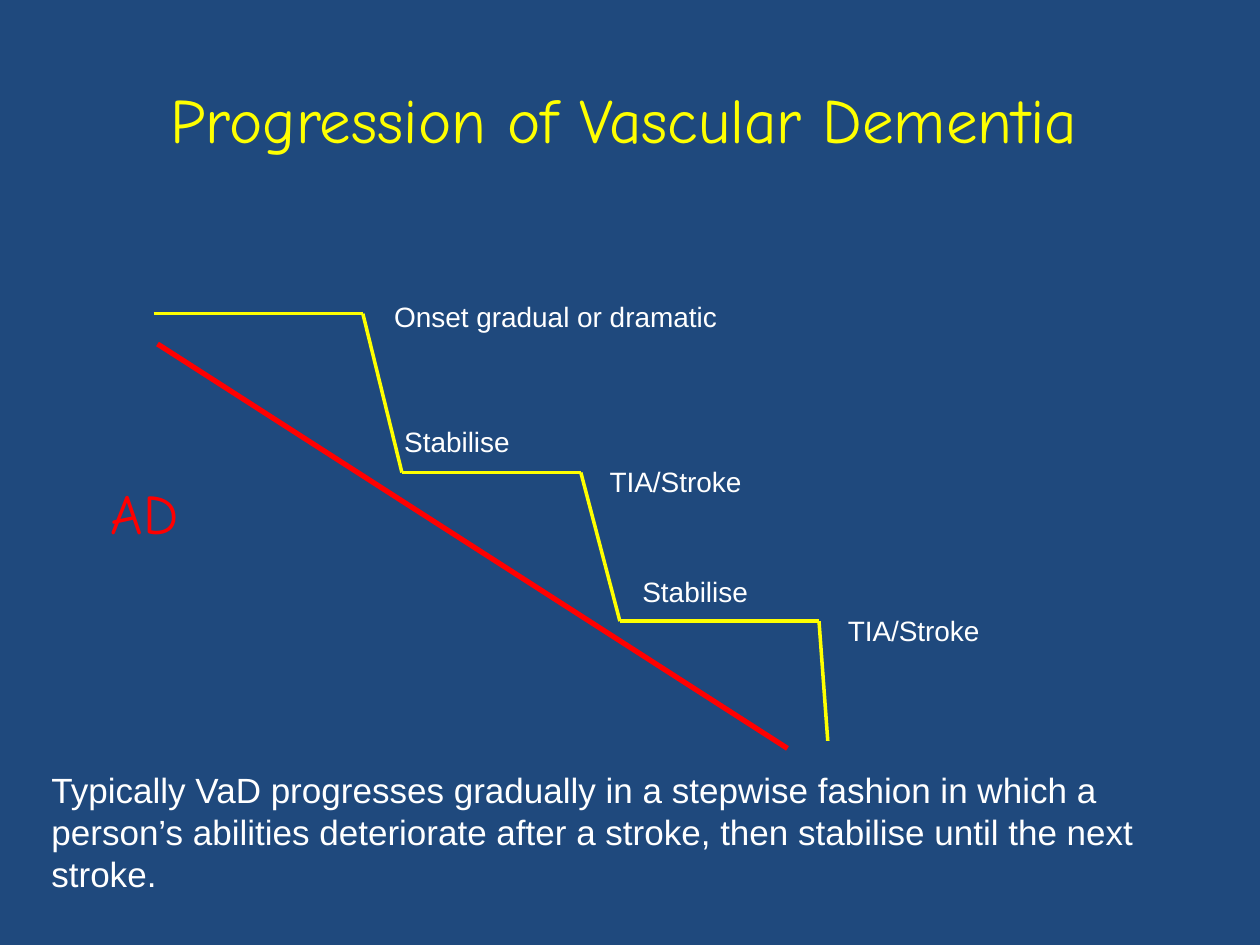
from itertools import pairwise

from lxml.etree import SubElement
from pptx import Presentation
from pptx.dml.color import RGBColor
from pptx.enum.shapes import MSO_CONNECTOR
from pptx.enum.text import MSO_ANCHOR, PP_ALIGN
from pptx.oxml.ns import qn
from pptx.util import Inches, Pt

# Positions are columns and rows of a 100 x 75 grid.
CELL = Inches(0.1)
COLUMNS, ROWS = 100, 75
COLORS = {
    "background": "1F497D",
    "vascular": "FFFF00",
    "alzheimer": "FF0000",
    "text": "FFFFFF",
}
HEADING_FONT, BODY_FONT = "Comic Neue", "Arial"
LABEL_HEIGHT = 3.7

DECLINE_STEPS = [
    (12.2, 24.9), (28.8, 24.9), (31.9, 37.5), (46.1, 37.5),
    (49.2, 49.3), (65, 49.3), (65.7, 58.8),
]
STEADY_DECLINE = [(12.5, 27.3), (62.5, 59.4)]
STAGE_LABELS = [
    ("Onset gradual or dramatic", 30.3, 23.3, 29.9, True),
    ("Stabilise", 31.1, 33.2, 18.8, True),
    ("TIA/Stroke", 47.4, 36.4, 12.5, False),
    ("Stabilise", 50, 45.1, 12.5, True),
    ("TIA/Stroke", 66.3, 48.2, 12.5, False),
]
SUMMARY = (
    "Typically VaD progresses gradually in a stepwise fashion in which a "
    "person’s abilities deteriorate after a stroke, then stabilise until "
    "the next stroke."
)


def color(role):
    return RGBColor.from_string(COLORS[role])


def grid(*cells):
    return [round(CELL * cell) for cell in cells]


def add_text(slide, words, box, size, role="text", font=BODY_FONT, wrap=True):
    frame = slide.shapes.add_textbox(*grid(*box)).text_frame
    frame.word_wrap = wrap
    paragraph = frame.paragraphs[0]
    paragraph.text = words
    paragraph.font.name = font
    paragraph.font.size = Pt(size)
    paragraph.font.color.rgb = color(role)
    return frame


def add_course(slide, points, role, width):
    """Join successive points with straight lines."""
    for start, end in pairwise(points):
        segment = slide.shapes.add_connector(
            MSO_CONNECTOR.STRAIGHT, *grid(*start, *end)
        )
        segment.line.color.rgb = color(role)
        segment.line.width = Pt(width)
        SubElement(segment.element.spPr, qn("a:effectLst"))


def add_title(slide, words):
    frame = add_text(slide, words, (7, 3.1, 85, 12.5), 36, "vascular", HEADING_FONT)
    frame.vertical_anchor = MSO_ANCHOR.MIDDLE
    frame.paragraphs[0].alignment = PP_ALIGN.CENTER


def main():
    deck = Presentation()
    deck.slide_width, deck.slide_height = grid(COLUMNS, ROWS)
    slide = deck.slides.add_slide(deck.slide_layouts[6])
    slide.background.fill.solid()
    slide.background.fill.fore_color.rgb = color("background")

    add_title(slide, "Progression of Vascular Dementia")
    add_course(slide, DECLINE_STEPS, "vascular", 2)
    for words, left, top, width, wrap in STAGE_LABELS:
        add_text(slide, words, (left, top, width, LABEL_HEIGHT), 16, wrap=wrap)
    add_text(slide, SUMMARY, (3.1, 60.5, 93, 14.5), 20)
    add_course(slide, STEADY_DECLINE, "alzheimer", 3)
    add_text(slide, "AD", (7.8, 37.5, 12.5, 6.4), 32, "alzheimer", HEADING_FONT)

    deck.save("out.pptx")


if __name__ == "__main__":
    main()
